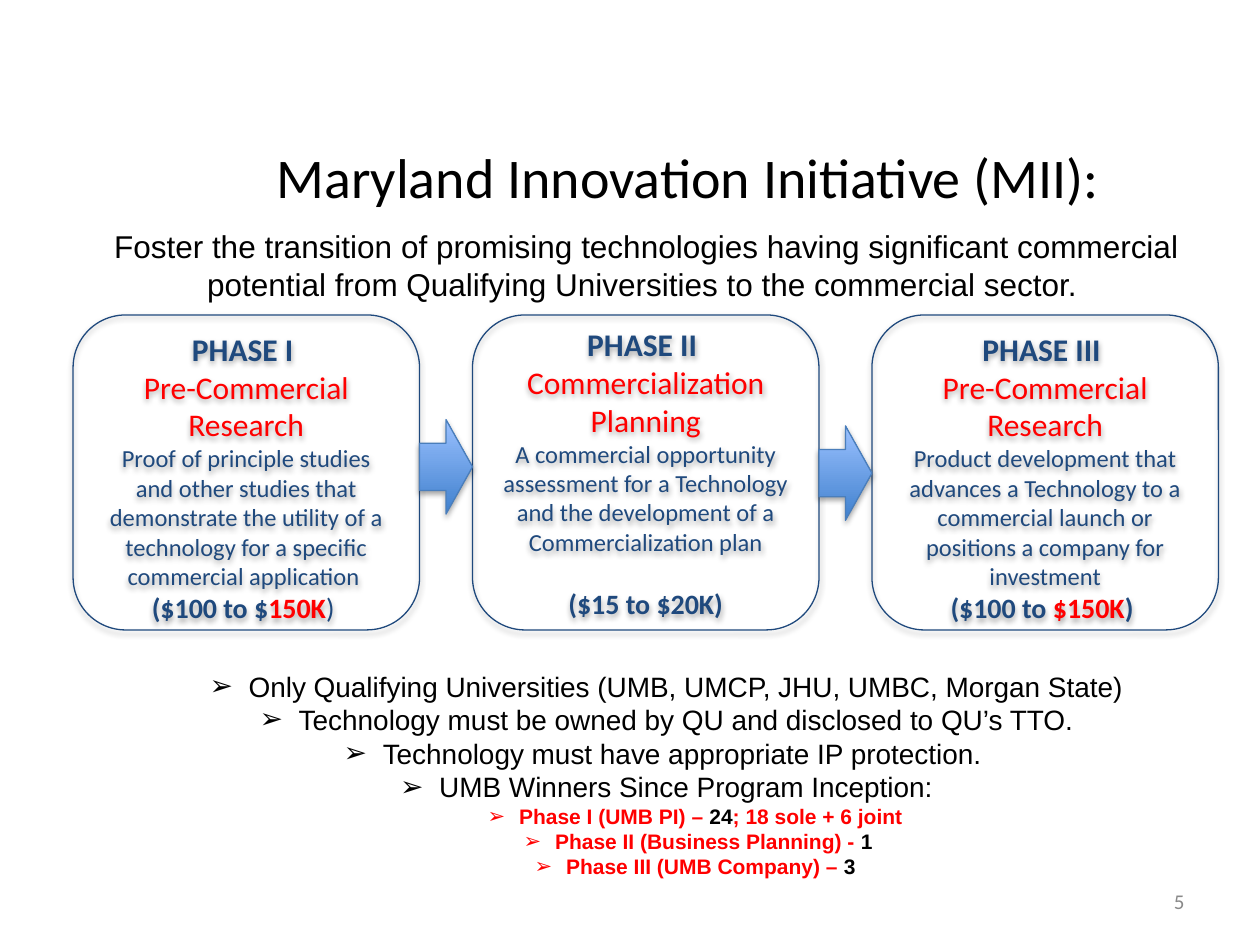
from lxml.etree import SubElement
from pptx import Presentation
from pptx.dml.color import RGBColor
from pptx.enum.shapes import MSO_SHAPE as Shape
from pptx.enum.text import MSO_ANCHOR as Anchor, MSO_AUTO_SIZE as AutoSize, PP_ALIGN as Align
from pptx.oxml.ns import qn
from pptx.util import Pt

PX = 9144  # 100 px to the inch
COLORS = {
    "black": "000000", "navy": "1F497D", "red": "FF0000", "grey": "898989",
    "arrow_line": "4A7EBB", "arrow_dark": "3F80CD", "arrow_light": "9BC1FF",
}
PHASE_SIZE, PHASE_STEP = 250, 317

# Spans are (text, colour, bold)
PHASES = [
    ("PHASE I ", "Pre-Commercial Research",
     "Proof of principle studies and other studies that demonstrate the utility "
     "of a technology for a specific commercial application ",
     [("($100 to $", "navy", True), ("150K", "red", True), (") ", "navy", False)], 0, 12),
    ("PHASE II ", "Commercialization Planning",
     "A commercial opportunity assessment for a Technology and the development "
     "of a Commercialization plan",
     [("($15 to $20K)", "navy", True)], 17, 5),
    ("PHASE III ", "Pre-Commercial Research",
     "Product development that advances a Technology to a commercial launch or "
     "positions a company for investment",
     [("($100 to ", "navy", True), ("$150K", "red", True), (") ", "navy", True)], 0, 12),
]
RULES = [
    "Only Qualifying Universities (UMB, UMCP, JHU, UMBC, Morgan State)",
    "Technology must be owned by QU and disclosed to QU’s TTO.",
    "Technology must have appropriate IP protection. ",
    "UMB Winners Since Program Inception:",
]
WINNERS = [
    [("Phase I (UMB PI) – ", "red", True), ("24", "black", True),
     ("; 18 sole + 6 joint ", "red", True)],
    [("Phase II (Business Planning) - ", "red", True), ("1", "black", True)],
    [("Phase III (UMB Company) – ", "red", True), ("3 ", "black", True)],
]


def rgb(name):
    return RGBColor.from_string(COLORS[name])


def emu(box):
    return [length * PX for length in box]


def place(item, box):
    item.left, item.top, item.width, item.height = emu(box)


def prepare(frame, anchor=Anchor.TOP):
    frame.word_wrap = True
    frame.auto_size = AutoSize.NONE
    frame.vertical_anchor = anchor


def next_para(frame):
    """Return the empty first paragraph, or a new one after it."""
    first = frame.paragraphs[0]
    return frame.add_paragraph() if first.runs else first


def write(para, spans, size, font, align=Align.CENTER, before=0):
    para.alignment = align
    para.space_before = Pt(before)
    for text, color, bold in spans:
        span = para.add_run()
        span.text = text
        span.font.name = font
        span.font.size = Pt(size)
        span.font.bold = bold
        span.font.color.rgb = rgb(color)


def add_shadow(item):
    item.shadow.inherit = False
    effects = item._element.spPr.find(qn("a:effectLst"))
    outer = SubElement(effects, qn("a:outerShdw"), blurRad="40000", dist="23000",
                       dir="5400000", rotWithShape="0")
    color = SubElement(outer, qn("a:srgbClr"), val=COLORS["black"])
    SubElement(color, qn("a:alpha"), val="35000")


def add_bullet(para, margin, hanging):
    props = para._p.get_or_add_pPr()
    props.set("marL", str(margin * PX))
    props.set("indent", str(-hanging * PX))
    SubElement(props, qn("a:buFont"), typeface="Arial")
    SubElement(props, qn("a:buChar"), char="➢")


def add_title(page, box):
    title = page.shapes.title
    place(title, box)
    prepare(title.text_frame)
    write(title.text_frame.paragraphs[0],
          [("Maryland Innovation Initiative (MII):", "black", False)], 32, "Calibri")


def add_label(page, box, text, size, font, color, align, anchor):
    label = page.shapes.add_textbox(*emu(box))
    prepare(label.text_frame, anchor)
    write(label.text_frame.paragraphs[0], [(text, color, False)], size, font, align)


def add_phase(page, box, heading, name, summary, funding, gap, top_inset):
    phase = page.shapes.add_shape(Shape.ROUNDED_RECTANGLE, *emu(box))
    phase.fill.background()
    phase.line.color.rgb = rgb("navy")
    phase.line.width = Pt(0.75)
    add_shadow(phase)
    frame = phase.text_frame
    prepare(frame, Anchor.MIDDLE)
    frame.margin_top = top_inset * PX
    write(next_para(frame), [(heading, "navy", True)], 18, "Calibri")
    write(next_para(frame), [(name, "red", False)], 18, "Calibri")
    write(next_para(frame), [(summary, "navy", False)], 14, "Calibri")
    write(next_para(frame), funding, 16, "Calibri", before=gap)


def add_arrow(page, box):
    arrow = page.shapes.add_shape(Shape.RIGHT_ARROW, *emu(box))
    arrow.fill.gradient()
    arrow.fill.gradient_angle = 90
    for stop, name in zip(arrow.fill.gradient_stops, ("arrow_dark", "arrow_light")):
        stop.color.rgb = rgb(name)
    arrow.line.color.rgb = rgb("arrow_line")
    arrow.line.width = Pt(0.75)
    add_shadow(arrow)


def add_phases(page, box):
    """Three phase boxes in a row, with an arrow in each gap."""
    left, top, width, height = box
    phase_width = width - 2 * PHASE_STEP
    for index, phase in enumerate(PHASES):
        add_phase(page, (left + index * PHASE_STEP, top, phase_width, height), *phase)
    for index, drop in enumerate((83, 88)):
        add_arrow(page, (left + index * PHASE_STEP + phase_width, top + drop,
                         PHASE_STEP - phase_width, 75))


def add_rules(page, box):
    body = page.placeholders[1]
    place(body, box)
    frame = body.text_frame
    prepare(frame)
    items = [([(rule, "black", False)], 1, 16, 81, 31) for rule in RULES]
    items += [(spans, 2, 12, 125, 25) for spans in WINNERS]
    for spans, level, size, margin, hanging in items:
        para = next_para(frame)
        para.level = level
        para.space_before = Pt(0)
        add_bullet(para, margin, hanging)
        write(para, spans, size, "Arial")


def main():
    deck = Presentation()
    deck.slide_width, deck.slide_height = emu((1000, 750))
    page = deck.slides.add_slide(deck.slide_layouts[1])
    add_title(page, (92, 108, 908, 92))
    add_label(page, (42, 175, 942, 101),
              "Foster the transition of promising technologies having significant "
              "commercial potential from Qualifying Universities to the commercial sector. ",
              18, "Arial", "black", Align.CENTER, Anchor.TOP)
    add_phases(page, (58, 250, 275 + 2 * PHASE_STEP, PHASE_SIZE))
    add_rules(page, (33, 526, 942, 185))
    add_label(page, (717, 695, 233, 40), "5", 12, "Calibri", "grey",
              Align.RIGHT, Anchor.MIDDLE)
    deck.save("out.pptx")


if __name__ == "__main__":
    main()
